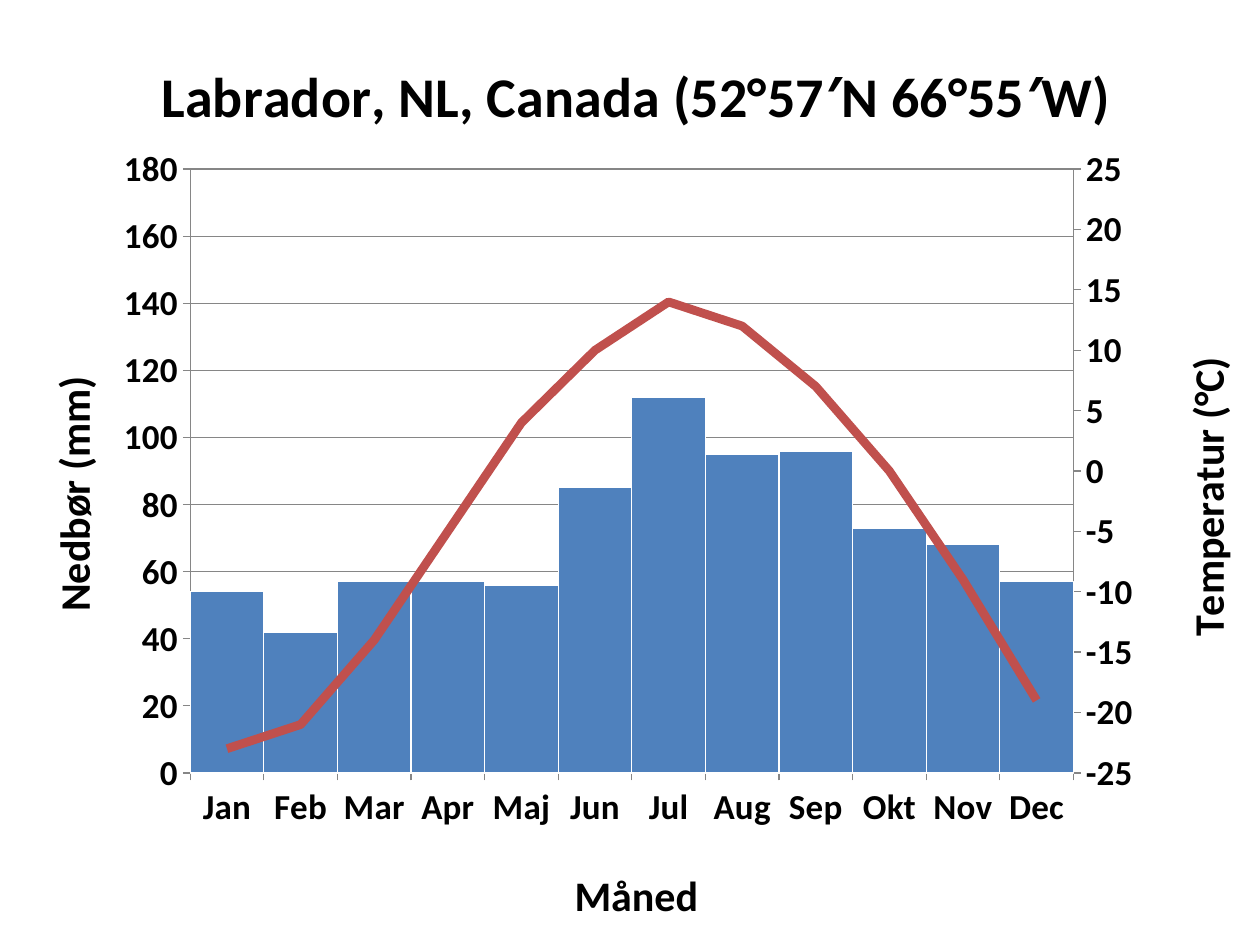
from copy import deepcopy

from lxml import etree
from pptx import Presentation
from pptx.chart.axis import CategoryAxis, ValueAxis
from pptx.chart.data import CategoryChartData
from pptx.dml.color import RGBColor
from pptx.enum.chart import XL_CHART_TYPE as ChartType
from pptx.enum.chart import XL_MARKER_STYLE as Marker
from pptx.enum.chart import XL_TICK_MARK as Tick
from pptx.oxml import parse_xml
from pptx.oxml.ns import nsdecls, qn
from pptx.util import Cm, Pt

BLACK = RGBColor(0x00, 0x00, 0x00)
WHITE = RGBColor(0xFF, 0xFF, 0xFF)
GREY = RGBColor(0x86, 0x86, 0x86)
BLUE = RGBColor(0x4F, 0x81, 0xBD)
RED = RGBColor(0xC0, 0x50, 0x4D)
FONT = "Calibri"

MONTHS = ["Jan", "Feb", "Mar", "Apr", "Maj", "Jun",
          "Jul", "Aug", "Sep", "Okt", "Nov", "Dec"]
RAINFALL = [54, 42, 57, 57, 56, 85, 112, 95, 96, 73, 68, 57]
TEMPERATURE = [-23, -21, -14, -5, 4, 10, 14, 12, 7, 0, -9, -19]

HEADING = "Labrador, NL, Canada (52°57′N 66°55′W)"
MONTH_TITLE = "Måned"
RAIN_TITLE = "Nedbør (mm)"
TEMPERATURE_TITLE = "Temperatur (°C)"
PLOT_AREA = {"x": 0.151, "y": 0.179, "w": 0.701, "h": 0.639}


def layout_xml(place, inner=False):
    target = '<c:layoutTarget val="inner"/>' if inner else ""
    modes = "".join(f'<c:{side}Mode val="edge"/>' for side in "xy")
    sizes = "".join(f'<c:{key} val="{value}"/>' for key, value in place.items())
    return parse_xml(f'<c:layout {nsdecls("c")}><c:manualLayout>{target}{modes}'
                     f'{sizes}</c:manualLayout></c:layout>')


def set_layout(parent, layout, position):
    for old in parent.findall(qn("c:layout")):
        parent.remove(old)
    parent.insert(position, layout)


def write_title(owner, element, text, size, x, y, upright=False):
    owner.has_title = True
    title = owner.chart_title if hasattr(owner, "chart_title") else owner.axis_title
    run = title.text_frame.paragraphs[0].add_run()
    run.text = text
    run.font.name = FONT
    run.font.size = Pt(size)
    run.font.bold = True
    run.font.color.rgb = BLACK
    title_xml = element.find(qn("c:title"))
    set_layout(title_xml, layout_xml({"x": x, "y": y}), 1)
    if upright:
        body = title_xml.find(".//" + qn("a:bodyPr"))
        body.set("rot", "-5400000")
        body.set("vert", "horz")


def style_axis(axis):
    axis.major_tick_mark = Tick.OUTSIDE
    axis.minor_tick_mark = Tick.NONE
    axis.format.line.color.rgb = GREY
    axis.format.line.width = Pt(0.75)
    labels = axis.tick_labels
    labels.number_format = "General"
    labels.number_format_is_linked = False
    labels.font.name = FONT
    labels.font.size = Pt(20)
    labels.font.bold = True
    labels.font.color.rgb = BLACK


def set_scale(axis, low, high, step):
    axis.minimum_scale, axis.maximum_scale, axis.major_unit = low, high, step


def link_axes(axis_xml, own, other):
    axis_xml.find(qn("c:axId")).set("val", own)
    axis_xml.find(qn("c:crossAx")).set("val", other)


def move_to_line(plot_area, month_id, value_id):
    bars = plot_area.find(qn("c:barChart"))
    series = bars.findall(qn("c:ser"))[1]
    for flag in series.findall(qn("c:invertIfNegative")):
        series.remove(flag)
    line = parse_xml(f'<c:lineChart {nsdecls("c")}><c:grouping val="standard"/>'
                     '<c:varyColors val="0"/></c:lineChart>')
    line.append(series)
    for tag, value in (("marker", "1"), ("axId", month_id), ("axId", value_id)):
        etree.SubElement(line, qn(f"c:{tag}")).set("val", value)
    bars.addnext(line)


deck = Presentation()
deck.slide_width, deck.slide_height = Cm(25.4), Cm(19.05)
slide = deck.slides.add_slide(deck.slide_layouts[6])

climate = CategoryChartData()
climate.categories = MONTHS
climate.add_series("Series 1", RAINFALL)
climate.add_series("Series 2", TEMPERATURE)
chart = slide.shapes.add_chart(ChartType.COLUMN_CLUSTERED, Cm(0), Cm(0),
                               deck.slide_width, deck.slide_height, climate).chart
chart.has_legend = False
chart.font.name = FONT
chart.font.size = Pt(10)
chart.font.color.rgb = BLACK

chart_xml = chart.element.find(qn("c:chart"))
plot_area = chart_xml.find(qn("c:plotArea"))
set_layout(plot_area, layout_xml(PLOT_AREA, inner=True), 0)

month_axis, rain_axis = chart.category_axis, chart.value_axis
style_axis(month_axis)
style_axis(rain_axis)
month_axis.has_major_gridlines = False
rain_axis.has_major_gridlines = True
rain_axis.major_gridlines.format.line.color.rgb = GREY
rain_axis.major_gridlines.format.line.width = Pt(0.75)

month_xml = plot_area.find(qn("c:catAx"))
rain_xml = plot_area.find(qn("c:valAx"))
hidden_xml, temperature_xml = deepcopy(month_xml), deepcopy(rain_xml)
hidden_id, temperature_id = "50010", "50020"
link_axes(hidden_xml, hidden_id, temperature_id)
link_axes(temperature_xml, temperature_id, hidden_id)
rain_xml.addnext(temperature_xml)
temperature_xml.addnext(hidden_xml)
move_to_line(plot_area, hidden_id, temperature_id)

CategoryAxis(hidden_xml).visible = False
temperature_axis = ValueAxis(temperature_xml)
temperature_axis.has_major_gridlines = False
temperature_xml.find(qn("c:axPos")).set("val", "r")
temperature_xml.find(qn("c:crosses")).set("val", "max")
set_scale(rain_axis, 0, 180, 20)
set_scale(temperature_axis, -25, 25, 5)

write_title(chart, chart_xml, HEADING, 32, 0.12, 0.05)
write_title(month_axis, month_xml, MONTH_TITLE, 24, 0.45, 0.91)
write_title(rain_axis, rain_xml, RAIN_TITLE, 24, 0.03, 0.39, upright=True)
write_title(temperature_axis, temperature_xml, TEMPERATURE_TITLE, 24,
            0.93, 0.37, upright=True)

rain_plot, temperature_plot = chart.plots
rain_plot.vary_by_categories = False
rain_plot.gap_width = 0
rain_bars = rain_plot.series[0]
rain_bars.format.fill.solid()
rain_bars.format.fill.fore_color.rgb = BLUE
rain_bars.format.line.color.rgb = WHITE
rain_bars.format.line.width = Pt(0.75)

temperature_line = temperature_plot.series[0]
temperature_line.smooth = False
temperature_line.marker.style = Marker.NONE
temperature_line.format.line.color.rgb = RED
temperature_line.format.line.width = Pt(5)

deck.save("out.pptx")
